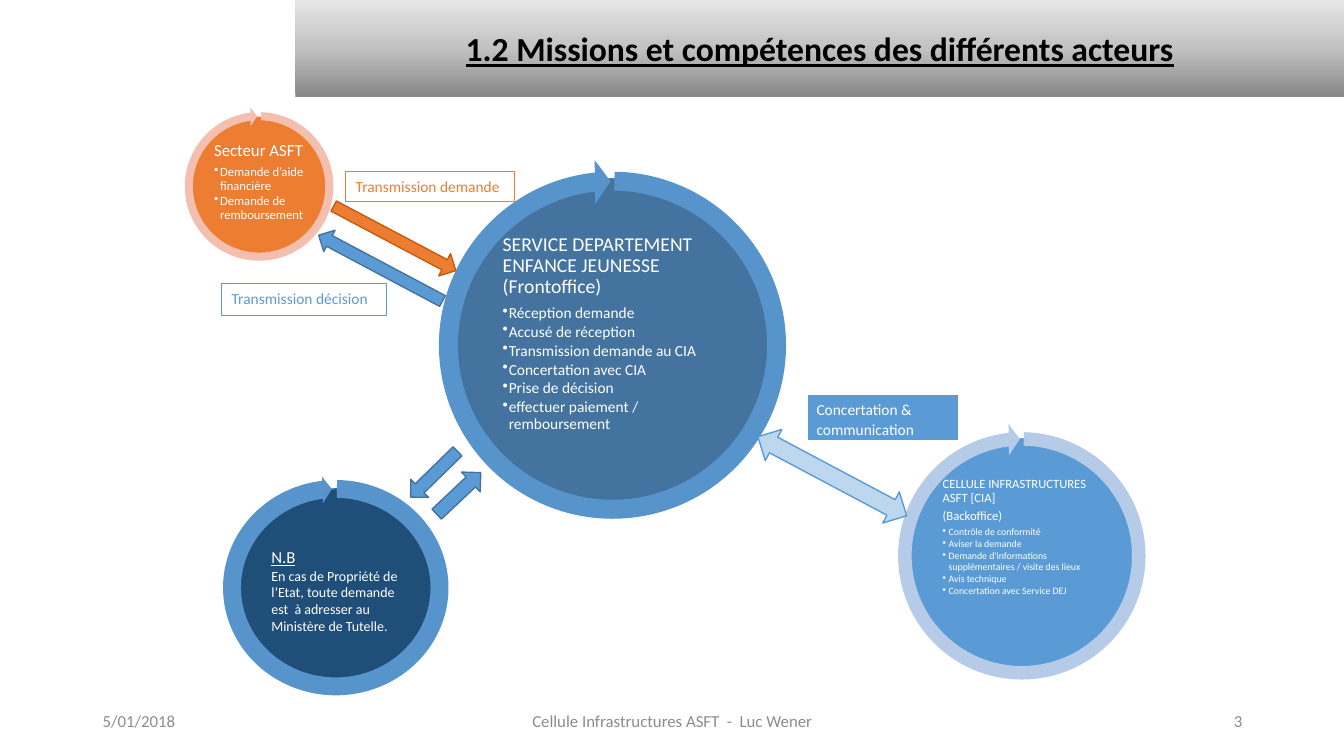
from copy import deepcopy

from lxml import etree
from pptx import Presentation
from pptx.dml.color import RGBColor
from pptx.enum.shapes import MSO_SHAPE as SHAPE
from pptx.enum.text import MSO_ANCHOR as ANCHOR, PP_ALIGN as ALIGN
from pptx.oxml.ns import qn
from pptx.util import Inches, Pt

FONT = "Calibri"
COLORS = {
    "white": "FFFFFF", "black": "000000", "footer": "8C8C8C",
    "band_dark": "898888", "band_mid": "C3C2C2", "band_light": "E7E6E6",
    "blue": "5B9BD5", "steel": "43739E", "ring": "5794CB", "pale_ring": "B5CBE7",
    "pale_blue": "BDD7EE", "navy": "1F4E79", "navy_line": "2E75B6",
    "orange": "ED7D31", "rust": "C55A11", "peach": "F4BFAE",
}
INDENT = 0.06


def rgb(name):
    return RGBColor.from_string(COLORS[name])


def add_figure(slide, kind, box, fill=None, line=None, width=1, rotation=0, adjust=()):
    figure = slide.shapes.add_shape(kind, *map(Inches, box))
    figure.shadow.inherit = False
    figure.rotation = rotation
    for index, value in enumerate(adjust):
        figure.adjustments[index] = value
    if fill:
        figure.fill.solid()
        figure.fill.fore_color.rgb = rgb(fill)
    if line:
        figure.line.color.rgb = rgb(line)
        figure.line.width = Pt(width)
    else:
        figure.line.fill.background()
    return figure


def set_frame(holder, anchor=ANCHOR.TOP, inset=(0.1, 0.05)):
    frame = holder.text_frame
    frame.word_wrap = True
    frame.vertical_anchor = anchor
    frame.margin_left = frame.margin_right = Inches(inset[0])
    frame.margin_top = frame.margin_bottom = Inches(inset[1])
    return frame


def add_bullet(paragraph):
    properties = paragraph._p.get_or_add_pPr()
    properties.set("marL", str(Inches(INDENT)))
    properties.set("indent", str(-Inches(INDENT)))
    etree.SubElement(properties, qn("a:buChar")).set("char", "•")


def write(frame, text, size, color="white", bold=False, underline=False,
          align=ALIGN.LEFT, spacing=None, after=0, bullet=False):
    """Fill the frame's empty first paragraph, or append a new one."""
    first = frame.paragraphs[0]
    paragraph = frame.add_paragraph() if first.runs else first
    if bullet:
        add_bullet(paragraph)
    paragraph.alignment = align
    paragraph.space_after = Pt(after)
    if spacing:
        paragraph.line_spacing = spacing
    run = paragraph.add_run()
    run.text = text
    font = run.font
    font.name, font.size = FONT, Pt(size)
    font.bold, font.underline = bold, underline
    font.color.rgb = rgb(color)


def add_title(slide, box, text):
    band = add_figure(slide, SHAPE.RECTANGLE, box)
    band.fill.gradient()
    band.fill.gradient_angle = 90
    stop_list = band._element.spPr.find(qn("a:gradFill")).find(qn("a:gsLst"))
    stop_list.insert(1, deepcopy(stop_list[0]))
    shades = ((0.01, "band_dark"), (0.5, "band_mid"), (1, "band_light"))
    for stop, (position, shade) in zip(band.fill.gradient_stops, shades):
        stop.position = position
        stop.color.rgb = rgb(shade)
    frame = set_frame(band, ANCHOR.MIDDLE, (0.1, 0.28))
    write(frame, text, 24, "black", bold=True, underline=True, align=ALIGN.CENTER)


def add_ring(slide, box, color, end, start, thickness=0.051):
    add_figure(slide, SHAPE.CIRCULAR_ARROW, box, color,
               adjust=(thickness, 3.275, end, start, 0.059))


def add_actor(slide, disc, ring, fill, ring_fill, angles, headings, tasks, sizes, inset):
    """Disc with headings and tasks in its central square, circled by a ring."""
    left, top, side = disc
    add_figure(slide, SHAPE.OVAL, (left, top, side, side), fill, "white")
    square = (left + side / 6, top + side / 6, side * 2 / 3, side * 2 / 3)
    frame = set_frame(slide.shapes.add_textbox(*map(Inches, square)), inset=(inset, inset))
    heading_size, task_size = sizes
    for heading in headings:
        write(frame, heading, heading_size, spacing=0.9, after=heading_size * 0.35)
    for task in tasks:
        write(frame, task, task_size, spacing=0.9, after=task_size * 0.15, bullet=True)
    ring_left, ring_top, ring_side = ring
    add_ring(slide, (ring_left, ring_top, ring_side, ring_side), ring_fill, *angles)


def add_actors(slide):
    add_actor(slide, (4.42, 1.76, 3.28), (4.23, 1.58, 3.69), "steel", "ring",
              (158.312, 162.412),
              ["SERVICE DEPARTEMENT ENFANCE JEUNESSE (Frontoffice)"],
              ["Réception demande", "Accusé de réception", "Transmission demande au CIA",
               "Concertation avec CIA", "Prise de décision",
               "effectuer paiement / remboursement"], (14, 11), 0.02)
    add_actor(slide, (8.95, 4.34, 2.34), (8.82, 4.2, 2.63), "blue", "pale_ring",
              (158.145, 162.579),
              ["CELLULE INFRASTRUCTURES ASFT [CIA]", "(Backoffice)"],
              ["Contrôle de conformité", "Aviser la demande",
               "Demande d'informations supplémentaires / visite des lieux",
               "Avis technique", "Concertation avec Service DEJ"], (9, 7), 0.01)
    add_actor(slide, (1.87, 1.15, 1.4), (1.78, 1.06, 1.58), "orange", "peach",
              (157.761, 162.964), ["Secteur ASFT"],
              ["Demande d’aide financière", "Demande de remboursement"], (12, 9), 0.02)


def add_note(slide, box):
    left, top, width, height = box
    disc = add_figure(slide, SHAPE.OVAL, box, "navy", "navy_line")
    frame = set_frame(disc, ANCHOR.MIDDLE)
    write(frame, "N.B", 12, underline=True)
    write(frame, "En cas de Propriété de l’Etat, toute demande est  à adresser "
                 "au Ministère de Tutelle.", 10)
    ring = (left - 0.11, top - 0.13, width + 0.18, height + 0.2)
    add_ring(slide, ring, "ring", 157.364, 162.412, 0.08)


def add_exchanges(slide):
    arrows = [
        (SHAPE.LEFT_RIGHT_ARROW, (7.42, 4.55, 1.67, 0.35), 28, "pale_blue", "blue", ()),
        (SHAPE.RIGHT_ARROW, (3.23, 2.24, 1.37, 0.25), 27.9, "orange", "rust", (0.458, 0.5)),
        (SHAPE.RIGHT_ARROW, (3.08, 2.54, 1.39, 0.24), 208, "blue", "steel", ()),
        (SHAPE.RIGHT_ARROW, (4.25, 4.76, 0.6, 0.27), 316.7, "blue", "steel", ()),
        (SHAPE.DOWN_ARROW, (4.18, 4.38, 0.25, 0.65), 45.7, "blue", "steel", ()),
    ]
    for kind, box, rotation, fill, line, adjust in arrows:
        add_figure(slide, kind, box, fill, line, rotation=rotation, adjust=adjust)

    labels = [
        ("Transmission demande", (3.43, 1.7, 1.67, 0.3), "white", "orange", 0.5, "orange"),
        ("Transmission décision", (2.2, 2.81, 1.63, 0.32), "white", "blue", 0.5, "blue"),
        ("Concertation & communication", (8, 3.91, 1.51, 0.47), "blue", "white", 1.5, "white"),
    ]
    for text, box, fill, line, width, color in labels:
        label = add_figure(slide, SHAPE.RECTANGLE, box, fill, line, width)
        write(set_frame(label), text, 11, color, spacing=1.07, after=8)


def add_footer(slide, top, height):
    parts = [
        ("5/01/2018", 0.92, 3, ALIGN.LEFT),
        ("Cellule Infrastructures ASFT  -  Luc Wener", 4.42, 4.5, ALIGN.CENTER),
        ("3", 9.42, 3, ALIGN.RIGHT),
    ]
    for text, left, width, align in parts:
        holder = slide.shapes.add_textbox(*map(Inches, (left, top, width, height)))
        write(set_frame(holder, ANCHOR.MIDDLE), text, 12, "footer", align=align)


def main():
    deck = Presentation()
    deck.slide_width, deck.slide_height = Inches(13.33), Inches(7.5)
    slide = deck.slides.add_slide(deck.slide_layouts[6])
    add_title(slide, (2.93, 0, 10.4, 0.96),
              "1.2 Missions et compétences des différents acteurs")
    add_actors(slide)
    add_note(slide, (2.28, 4.85, 2.14, 2.02))
    add_exchanges(slide)
    add_footer(slide, 6.95, 0.4)
    deck.save("out.pptx")


if __name__ == "__main__":
    main()
